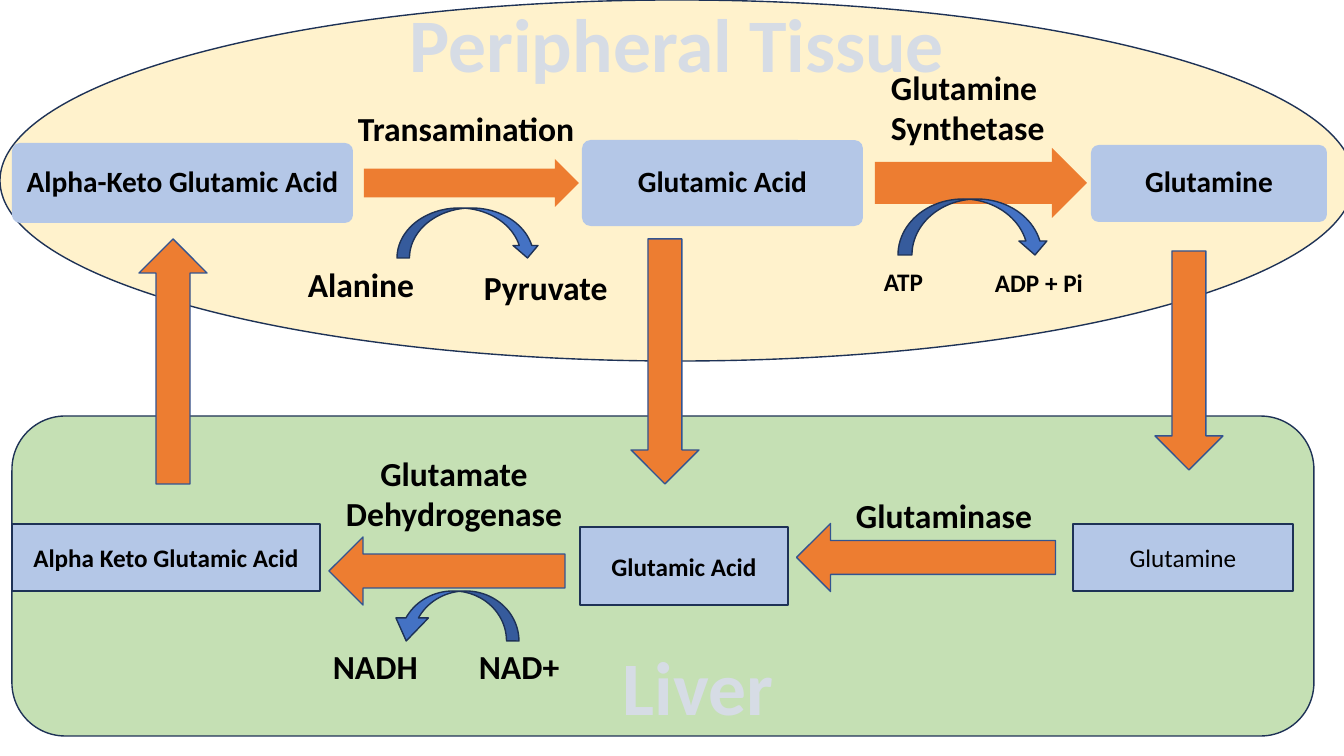
from dataclasses import dataclass

from pptx import Presentation
from pptx.dml.color import RGBColor
from pptx.enum.shapes import MSO_SHAPE as Shape
from pptx.enum.text import MSO_ANCHOR as Anchor, MSO_AUTO_SIZE as AutoSize, PP_ALIGN as Align
from pptx.oxml.ns import qn
from pptx.util import Emu, Pt

EMU_PER_PX = 914400 / 100.8


@dataclass(frozen=True)
class Theme:
    font: str = "Calibri"
    ink: str = "000000"
    tissue: str = "FFF2CC"
    liver: str = "C5E0B4"
    molecule: str = "B4C7E7"
    flow: str = "ED7D31"
    flow_edge: str = "325491"
    curve: str = "4472C4"
    edge: str = "1E3256"
    region_name: str = "D6DCE5"
    region_size: int = 54
    label_size: int = 24
    pill_size: int = 21
    small_size: int = 18


def px(*lengths):
    return [Emu(round(length * EMU_PER_PX)) for length in lengths]


def write(frame, text, size, color, font, bold=True, align=Align.CENTER, spacing=None):
    para = frame.paragraphs[0]
    para.alignment = align
    if spacing:
        para.line_spacing = spacing
    span = para.add_run()
    span.text = text
    span.font.name = font
    span.font.size = Pt(size)
    span.font.bold = bold
    span.font.color.rgb = RGBColor.from_string(color)


class Diagram:
    def __init__(self, page, theme):
        self.page = page
        self.theme = theme

    def shape(self, kind, at, fill, edge=None, adjust=(), turn=0, flip=None):
        shape = self.page.shapes.add_shape(kind, *px(*at))
        shape.shadow.inherit = False
        shape.fill.solid()
        shape.fill.fore_color.rgb = RGBColor.from_string(fill)
        if edge:
            shape.line.color.rgb = RGBColor.from_string(edge)
            shape.line.width = Pt(1)
        else:
            shape.line.fill.background()
        for index, value in enumerate(adjust):
            shape.adjustments[index] = value
        shape.rotation = turn
        if flip:
            shape.element.spPr.find(qn("a:xfrm")).set(flip, "1")
        return shape

    def region(self, kind, at, fill):
        self.shape(kind, at, fill, self.theme.edge)

    def molecule(self, text, at, pill=False, bold=True):
        theme = self.theme
        if pill:
            box = self.shape(Shape.ROUNDED_RECTANGLE, at, theme.molecule, adjust=(0.1,))
        else:
            box = self.shape(Shape.RECTANGLE, at, theme.molecule, theme.edge)
        frame = box.text_frame
        frame.word_wrap = True
        frame.vertical_anchor = Anchor.MIDDLE
        write(frame, text, theme.pill_size if pill else theme.small_size, theme.ink,
              theme.font, bold, spacing=0.9 if pill else None)

    def reaction(self, at):
        self.shape(Shape.RIGHT_ARROW, at, self.theme.flow, adjust=(0.6, 0.5))

    def flow(self, at, turn=0):
        self.shape(Shape.DOWN_ARROW, at, self.theme.flow, self.theme.flow_edge, turn=turn)

    def curve(self, at, **options):
        self.shape(Shape.CURVED_DOWN_ARROW, at, self.theme.curve, self.theme.edge, **options)

    def label(self, text, at, size=None, color=None, align=Align.LEFT, wrap=True):
        theme = self.theme
        frame = self.page.shapes.add_textbox(*px(*at)).text_frame
        frame.word_wrap = wrap
        frame.auto_size = AutoSize.SHAPE_TO_FIT_TEXT
        write(frame, text, size or theme.label_size, color or theme.ink, theme.font, align=align)

    def region_name(self, text, at):
        self.label(text, at, self.theme.region_size, self.theme.region_name, Align.CENTER, False)


def main():
    deck = Presentation()
    deck.slide_width, deck.slide_height = px(1344, 756)
    theme = Theme()
    diagram = Diagram(deck.slides.add_slide(deck.slide_layouts[6]), theme)

    diagram.region(Shape.ROUNDED_RECTANGLE, (12, 416, 1302, 320), theme.liver)
    diagram.region(Shape.OVAL, (0, 0, 1354, 361), theme.tissue)

    diagram.molecule("Alpha-Keto Glutamic Acid", (12, 143, 341, 80), pill=True)
    diagram.reaction((364, 159, 215, 48))
    diagram.molecule("Glutamic Acid", (582, 140, 281, 86), pill=True)
    diagram.reaction((875, 148, 212, 70))
    diagram.molecule("Glutamine", (1091, 145, 236, 77), pill=True)

    diagram.flow((1155, 251, 68, 219))
    diagram.molecule("Glutamine", (1073, 524, 220, 67), bold=False)
    diagram.flow((631, 239, 68, 245))
    diagram.molecule("Glutamic Acid", (580, 527, 208, 78))
    diagram.molecule("Alpha Keto Glutamic Acid", (12, 524, 308, 67))
    diagram.flow((139, 239, 68, 245), turn=180)
    diagram.flow((892, 428, 68, 259), turn=90)
    diagram.flow((413, 453, 68, 236), turn=90)

    diagram.region_name("Peripheral Tissue", (397, -8, 560, 102))
    diagram.region_name("Liver", (612, 635, 172, 102))

    diagram.curve((397, 208, 143, 50))
    diagram.curve((390, 591, 129, 50), adjust=(0.25, 0.65, 0.46), flip="flipH")
    diagram.curve((898, 199, 151, 56))

    for text, at in (
        ("Transamination", (348, 103, 271, 50)),
        ("Glutamine Synthetase", (881, 62, 183, 92)),
        ("Glutaminase", (846, 490, 201, 50)),
        ("Alanine", (298, 259, 152, 50)),
        ("Pyruvate", (474, 262, 152, 50)),
        ("NADH", (323, 641, 107, 50)),
        ("NAD+", (469, 641, 152, 50)),
    ):
        diagram.label(text, at)
    diagram.label("Glutamate Dehydrogenase", (335, 448, 238, 92), align=Align.CENTER)
    diagram.label("ADP + Pi", (985, 262, 110, 40), theme.small_size, wrap=False)
    diagram.label("ATP", (874, 261, 59, 40), theme.small_size, wrap=False)

    deck.save("out.pptx")


if __name__ == "__main__":
    main()
